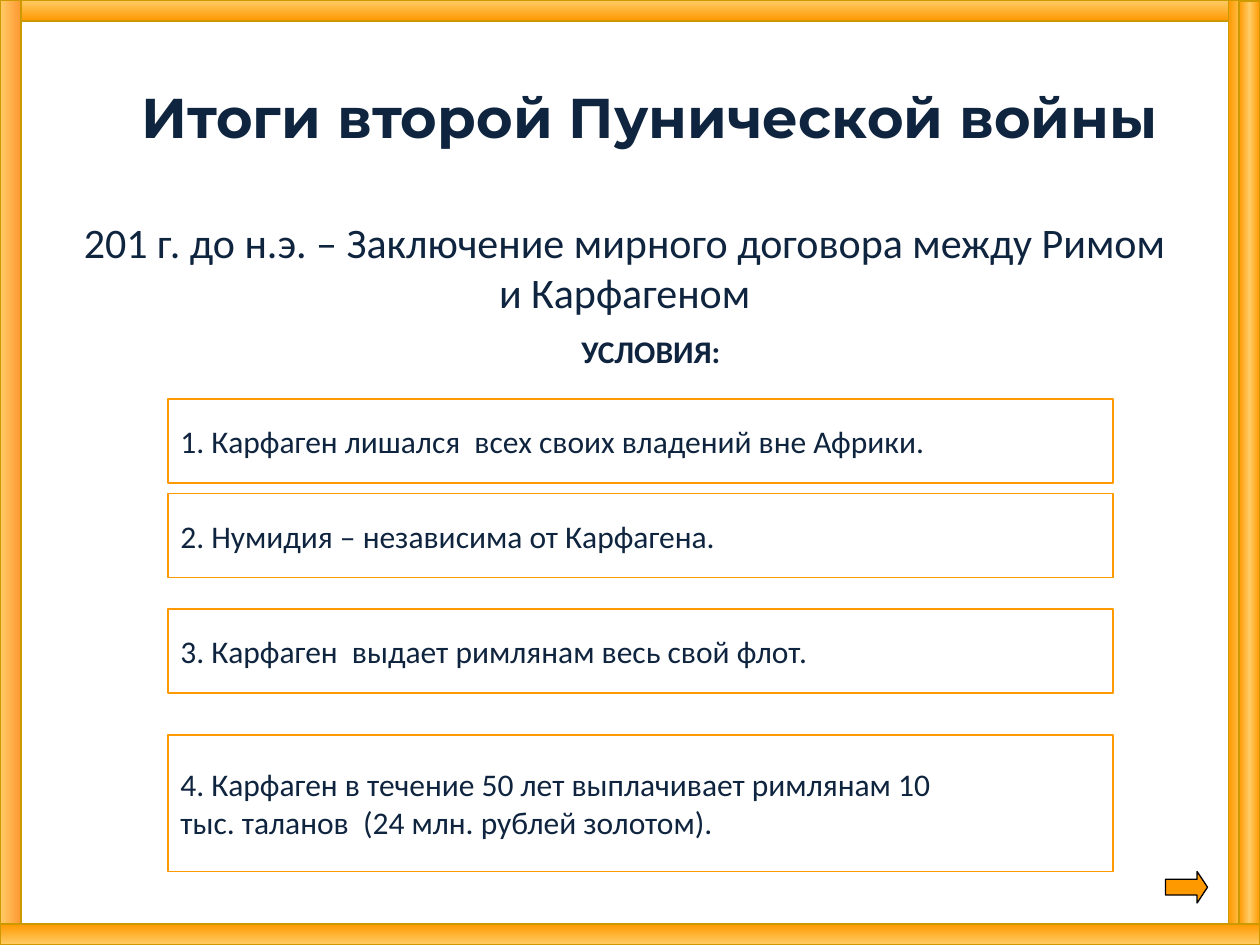
import pptx
import pptx.util
import pptx.dml.color
import pptx.enum.shapes
import pptx.enum.text
import pptx.oxml.ns
import lxml.etree

THEME = {
    "ink": "0F243E", "title_edge": "0D0D0D", "terms_edge": "984807",
    "amber": "FF9900", "light": "FFCC66", "peach": "FF9933",
    "frame_edge": "CC9900", "black": "000000",
    "title_font": "Montserrat", "body_font": "Calibri",
    "title_size": 32, "lead_size": 24, "text_size": 18, "line": 0.75,
}
qn = pptx.oxml.ns.qn
RGB = pptx.dml.color.RGBColor.from_string
SHAPES = pptx.enum.shapes.MSO_SHAPE
CENTER = pptx.enum.text.PP_ALIGN.CENTER
LEFT = pptx.enum.text.PP_ALIGN.LEFT
MIDDLE = pptx.enum.text.MSO_ANCHOR.MIDDLE

presentation = pptx.Presentation()
presentation.slide_width = pptx.util.Inches(10)
presentation.slide_height = pptx.util.Inches(7.5)
column = presentation.slide_width / 120
row = presentation.slide_height / 90
slide = presentation.slides.add_slide(presentation.slide_layouts[5])


def add_shape(kind, left, top, width, height, line_color):
    shape = slide.shapes.add_shape(
        kind, int(left * column), int(top * row), int(width * column), int(height * row))
    shape.shadow.inherit = False
    shape.fill.background()
    shape.line.color.rgb = RGB(THEME[line_color])
    shape.line.width = pptx.util.Pt(THEME["line"])
    return shape


def write_text(text_frame, text, size, edge, align, font="body_font", bold=False):
    text_frame.text = text
    for paragraph in text_frame.paragraphs:
        paragraph.alignment = align
        for run in paragraph.runs:
            run.font.name = THEME[font]
            run.font.size = pptx.util.Pt(THEME[size])
            run.font.bold = bold
            run.font.color.rgb = RGB(THEME["ink"])
            outline = lxml.etree.Element(qn("a:ln"), w=str(pptx.util.Pt(THEME["line"])))
            fill = lxml.etree.SubElement(outline, qn("a:solidFill"))
            lxml.etree.SubElement(fill, qn("a:srgbClr"), val=THEME[edge])
            run.font._element.insert(0, outline)


title = slide.shapes.title
title.left, title.top = int(9.4 * column), int(3.6 * row)
title.width, title.height = int(105 * column), int(15 * row)
title.text_frame.vertical_anchor = MIDDLE
write_text(title.text_frame, "Итоги второй Пунической войны",
           "title_size", "title_edge", CENTER, "title_font", True)

right_colors = ["amber", "light", "amber"]
frame_bars = [
    (0, 0, 120, 2, 270, ["light", "amber"]),
    (0, 0, 2, 90, 0, ["light", "peach"]),
    (118, 0, 2, 90, 0, right_colors),
    (117, 0, 3, 90, 0, right_colors),
    (118, 0.1, 2, 90, 0, right_colors),
    (0, 88, 120, 2, 270, ["amber", "light"]),
]
for left, top, width, height, angle, colors in frame_bars:
    bar = add_shape(SHAPES.RECTANGLE, left, top, width, height, "frame_edge")
    bar.fill.gradient()
    bar.fill.gradient_angle = angle
    stops = bar._element.spPr.find(".//" + qn("a:gsLst"))
    for stop in list(stops):
        stops.remove(stop)
    for index, color in enumerate(colors):
        position = 100000 * index // (len(colors) - 1)
        stop = lxml.etree.SubElement(stops, qn("a:gs"), pos=str(position))
        lxml.etree.SubElement(stop, qn("a:srgbClr"), val=THEME[color])

headings = [
    (6, 20, 107, 11, "201 г. до н.э. – Заключение мирного договора между Римом и Карфагеном",
     "lead_size", "title_edge", False),
    (38, 31, 48, 4.8, "УСЛОВИЯ:", "text_size", "terms_edge", True),
]
for left, top, width, height, text, size, edge, bold in headings:
    box = slide.shapes.add_textbox(
        int(left * column), int(top * row), int(width * column), int(height * row))
    box.text_frame.word_wrap = True
    write_text(box.text_frame, text, size, edge, CENTER, bold=bold)

terms = [
    (38, 8, "1. Карфаген лишался  всех своих владений вне Африки."),
    (47, 8, "2. Нумидия – независима от Карфагена."),
    (58, 8, "3. Карфаген  выдает римлянам весь свой флот."),
    (70, 13, "4. Карфаген в течение 50 лет выплачивает римлянам 10\n"
             "тыс. таланов  (24 млн. рублей золотом)."),
]
for top, height, text in terms:
    term = add_shape(SHAPES.FLOWCHART_PROCESS, 16, top, 90, height, "amber")
    term.text_frame.word_wrap = False
    term.text_frame.vertical_anchor = MIDDLE
    write_text(term.text_frame, text, "text_size", "ink", LEFT)

arrow = add_shape(SHAPES.RIGHT_ARROW, 111, 83, 4, 3, "black")
arrow.adjustments[0] = 0.5
arrow.adjustments[1] = 0.33
arrow.fill.solid()
arrow.fill.fore_color.rgb = RGB(THEME["amber"])

presentation.save("out.pptx")
